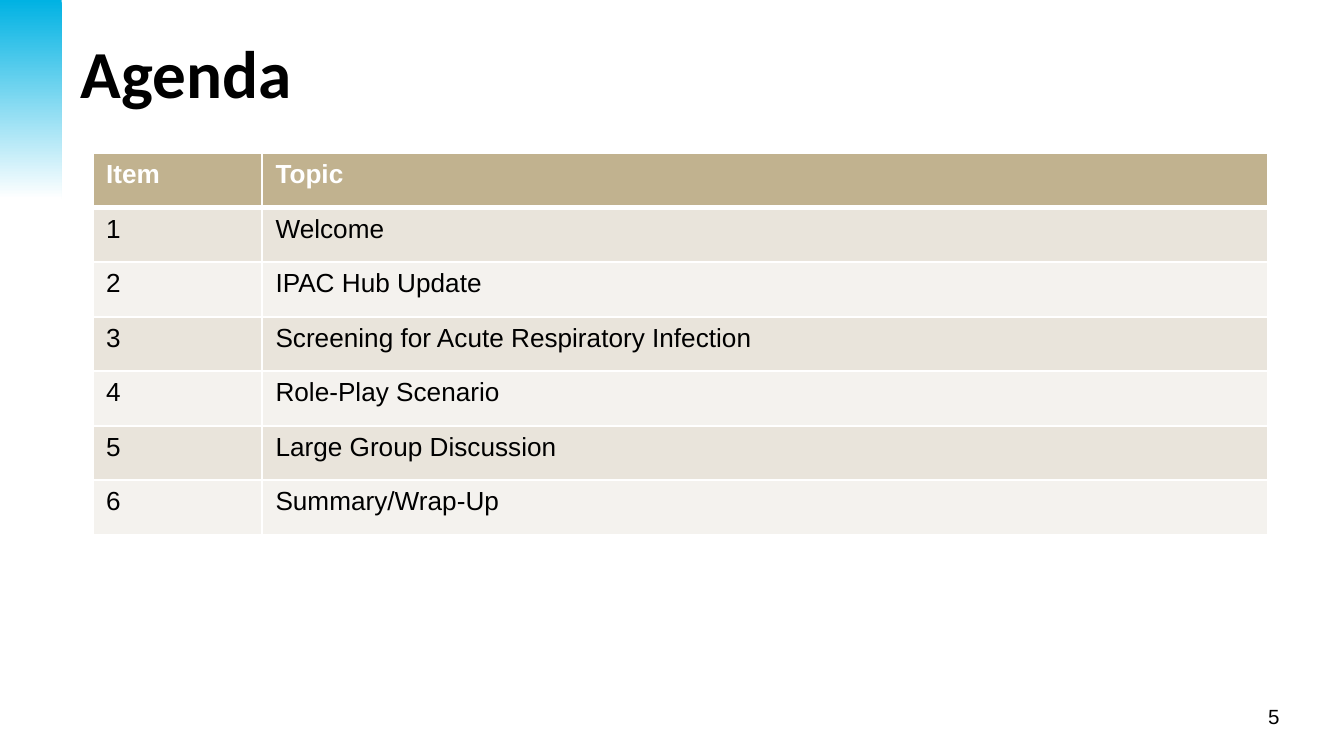
from typing import NamedTuple

from lxml import etree
from pptx import Presentation
from pptx.dml.color import RGBColor
from pptx.enum.shapes import MSO_SHAPE
from pptx.enum.text import MSO_ANCHOR, PP_ALIGN
from pptx.oxml.ns import qn
from pptx.util import Inches, Pt

RECT = MSO_SHAPE.RECTANGLE
TOP = MSO_ANCHOR.TOP
LEFT, RIGHT = PP_ALIGN.LEFT, PP_ALIGN.RIGHT

WHITE, BLACK, BLUE = "FFFFFF", "000000", "00B2E3"
TAN, DARK, LIGHT = "C1B28F", "E9E4DB", "F4F2EE"
COLS = (1.26, 7.48)
HIGH = 2.84


class Font(NamedTuple):
    name: str
    size: float
    color: str
    bold: bool = False


class Item(NamedTuple):
    label: str
    topic: str


HEAD = Font("Arial", 14, WHITE, True)
BODY = Font("Arial", 14, BLACK)
ITEMS = [
    Item("Item", "Topic"),
    Item("1", "Welcome"),
    Item("2", "IPAC Hub Update"),
    Item("3", "Screening for Acute Respiratory Infection"),
    Item("4", "Role-Play Scenario"),
    Item("5", "Large Group Discussion"),
    Item("6", "Summary/Wrap-Up"),
]


def rgb(color: str) -> RGBColor:
    return RGBColor.from_string(color)


def write(frame, text: str, font: Font, align=LEFT) -> None:
    para = frame.paragraphs[0]
    para.alignment = align
    run = para.add_run()
    run.text = text
    run.font.name = font.name
    run.font.size = Pt(font.size)
    run.font.bold = font.bold
    run.font.color.rgb = rgb(font.color)


def edge(cell, side: str, width: float) -> None:
    props = cell._tc.get_or_add_tcPr()
    line = etree.SubElement(props, qn(f"a:{side}"), w=str(Pt(width)))
    fill = etree.SubElement(line, qn("a:solidFill"))
    etree.SubElement(fill, qn("a:srgbClr"), val=WHITE)


def draw_cell(cell, text: str, row: int) -> None:
    head = row == 0
    write(cell.text_frame, text, HEAD if head else BODY)
    # Borders come before the fill in the cell properties
    edge(cell, "lnL", 1)
    edge(cell, "lnR", 1)
    edge(cell, "lnT", 3 if row == 1 else 1)
    edge(cell, "lnB", 3 if head else 1)
    cell.fill.solid()
    cell.fill.fore_color.rgb = rgb(TAN if head else DARK if row % 2 else LIGHT)


def draw_table(slide, items: list[Item]) -> None:
    table = slide.shapes.add_table(
        len(items), len(COLS), Inches(0.69), Inches(1.14),
        Inches(sum(COLS)), Inches(HIGH)).table
    for col, width in zip(table.columns, COLS):
        col.width = Inches(width)
    for row, item in enumerate(items):
        table.rows[row].height = Inches(HIGH / len(items))
        for col, text in enumerate(item):
            draw_cell(table.cell(row, col), text, row)


def draw_band(slide) -> None:
    band = slide.shapes.add_shape(RECT, 0, 0, Inches(0.46), Inches(1.48))
    band.shadow.inherit = False
    band.line.fill.background()
    band.fill.gradient()
    band.fill.gradient_angle = 270
    for stop, color, pos in zip(band.fill.gradient_stops, (BLUE, WHITE), (0, 1)):
        stop.color.rgb = rgb(color)
        stop.position = pos


def draw_title(slide, text: str) -> None:
    title = slide.shapes.title
    title.left, title.top = Inches(0.5), Inches(0.18)
    title.width, title.height = Inches(7.81), Inches(0.96)
    frame = title.text_frame
    frame.vertical_anchor = TOP
    frame.margin_top = Inches(0.05)
    write(frame, text, Font("Calibri", 36, BLACK, True))


def draw_page(slide, text: str) -> None:
    box = slide.shapes.add_textbox(
        Inches(8.45), Inches(5.19), Inches(1.17), Inches(0.29))
    box.text_frame.word_wrap = True
    write(box.text_frame, text, Font("Arial", 11, BLACK), RIGHT)


def main() -> None:
    deck = Presentation()
    # Widescreen, 16 to 9
    deck.slide_width = Inches(10)
    deck.slide_height = deck.slide_width * 9 // 16
    slide = deck.slides.add_slide(deck.slide_layouts[5])
    draw_band(slide)
    draw_page(slide, "5")
    draw_title(slide, "Agenda")
    draw_table(slide, ITEMS)
    deck.save("out.pptx")


if __name__ == "__main__":
    main()
